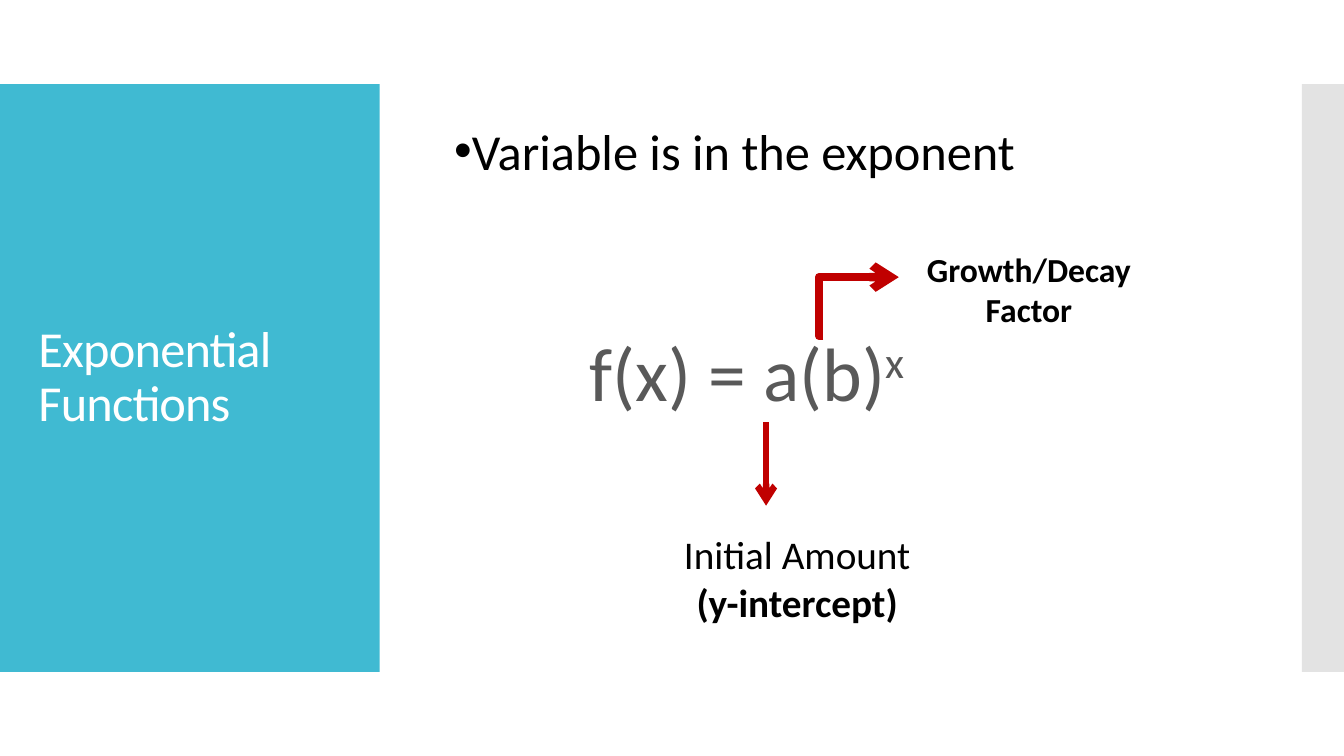
from lxml import etree
from pptx import Presentation
from pptx.dml.color import RGBColor
from pptx.enum.shapes import MSO_CONNECTOR, MSO_SHAPE
from pptx.enum.text import MSO_ANCHOR, PP_ALIGN
from pptx.oxml.ns import qn
from pptx.util import Inches, Pt

RECTANGLE = MSO_SHAPE.RECTANGLE
STRAIGHT, ELBOW = MSO_CONNECTOR.STRAIGHT, MSO_CONNECTOR.ELBOW
TOP, MIDDLE = MSO_ANCHOR.TOP, MSO_ANCHOR.MIDDLE
LEFT, CENTER = PP_ALIGN.LEFT, PP_ALIGN.CENTER

FONT = "Calibri"
TEAL, GRAY, RED = "40BAD2", "C8C8C8", "C00000"
WHITE, BLACK, DARK_GRAY = "FFFFFF", "000000", "595959"

# The slide is a grid of 16 columns and 9 rows
SLIDE_WIDTH, SLIDE_HEIGHT = Inches(13.33), Inches(7.5)
COLUMN, ROW = SLIDE_WIDTH / 16, SLIDE_HEIGHT / 9


def color(hex_text):
    return RGBColor.from_string(hex_text)


def grid(*values):
    """Turn alternating columns and rows into lengths."""
    return [int(value * (ROW if index % 2 else COLUMN))
            for index, value in enumerate(values)]


def add_panel(slide, box, fill, opacity=100):
    panel = slide.shapes.add_shape(RECTANGLE, *grid(*box))
    panel.shadow.inherit = False
    panel.fill.solid()
    panel.fill.fore_color.rgb = color(fill)
    panel.line.fill.background()
    if opacity < 100:
        fill_color = panel.fill._xPr.find(".//" + qn("a:srgbClr"))
        etree.SubElement(fill_color, qn("a:alpha"), val=str(opacity * 1000))


def add_text(slide, box, lines, size, text_color=BLACK, anchor=TOP,
             alignment=LEFT, bold_lines=()):
    """Add a text box with one paragraph per line and return its paragraphs."""
    text_frame = slide.shapes.add_textbox(*grid(*box)).text_frame
    text_frame.word_wrap = True
    text_frame.vertical_anchor = anchor
    text_frame.text = "\n".join(lines)
    for paragraph in text_frame.paragraphs:
        paragraph.alignment = alignment
        for run in paragraph.runs:
            run.font.name = FONT
            run.font.size = Pt(size)
            run.font.color.rgb = color(text_color)
            run.font.bold = paragraph.text in bold_lines
    return text_frame.paragraphs


def add_arrow(slide, kind, ends, width):
    arrow = slide.shapes.add_connector(kind, *grid(*ends))
    arrow.line.color.rgb = color(RED)
    arrow.line.width = Pt(width)
    etree.SubElement(arrow.line._get_or_add_ln(), qn("a:tailEnd"), type="arrow")
    etree.SubElement(arrow._element.spPr, qn("a:effectLst"))
    return arrow


def add_title(slide):
    paragraph, = add_text(slide, (0.34, 1.48, 3.86, 6.04),
                          ["Exponential Functions"], 36, WHITE, MIDDLE)
    paragraph.line_spacing = 0.9
    paragraph.runs[0].font._element.set("spc", "-60")


def add_formula(slide):
    paragraph, = add_text(slide, (5.08, 1.13, 9.6, 6.72),
                          ["f(x) = a(b)"], 54, DARK_GRAY, MIDDLE)
    paragraph.line_spacing = 0.9
    paragraph.space_before = Pt(12)
    paragraph._p.get_or_add_pPr().set("marL", str(Inches(1.52)))
    exponent = paragraph.add_run()
    exponent.text = "x"
    exponent.font.name = FONT
    exponent.font.size = Pt(54)
    exponent.font.color.rgb = color(DARK_GRAY)
    exponent.font._element.set("baseline", "30000")


def add_bullet_line(slide):
    paragraph, = add_text(slide, (5.29, 1.37, 8.4, 0.85),
                          ["Variable is in the exponent"], 36)
    properties = paragraph._p.get_or_add_pPr()
    etree.SubElement(properties, qn("a:buFont"), typeface="Arial")
    etree.SubElement(properties, qn("a:buChar"), char="•")


def add_factor_arrow(slide):
    arrow = add_arrow(slide, ELBOW, (9.8, 4, 10.7, 3.3), 6)
    # The bend lies just left of the starting point
    adjustments = arrow._element.spPr.find(".//" + qn("a:avLst"))
    etree.SubElement(adjustments, qn("a:gd"), name="adj1", fmla="val -5400")


def main():
    presentation = Presentation()
    presentation.slide_width, presentation.slide_height = SLIDE_WIDTH, SLIDE_HEIGHT
    slide = presentation.slides.add_slide(presentation.slide_layouts[6])

    # Side panels
    add_panel(slide, (0, 1, 4.52, 7), TEAL)
    add_panel(slide, (15.5, 1, 0.5, 7), GRAY, opacity=50)

    # Title, statement and formula
    add_title(slide)
    add_formula(slide)
    add_bullet_line(slide)

    # Labels of the formula's parts
    add_arrow(slide, STRAIGHT, (9.12, 5.03, 9.12, 6.02), 4.5)
    add_text(slide, (7.44, 6.26, 4.1, 1.25), ["Initial Amount", "(y-intercept)"],
             28, alignment=CENTER, bold_lines=["(y-intercept)"])
    add_text(slide, (10.5, 2.9, 3.5, 1.09), ["Growth/Decay", "Factor"],
             24, alignment=CENTER, bold_lines=["Growth/Decay", "Factor"])
    add_factor_arrow(slide)

    presentation.save("out.pptx")


if __name__ == "__main__":
    main()
